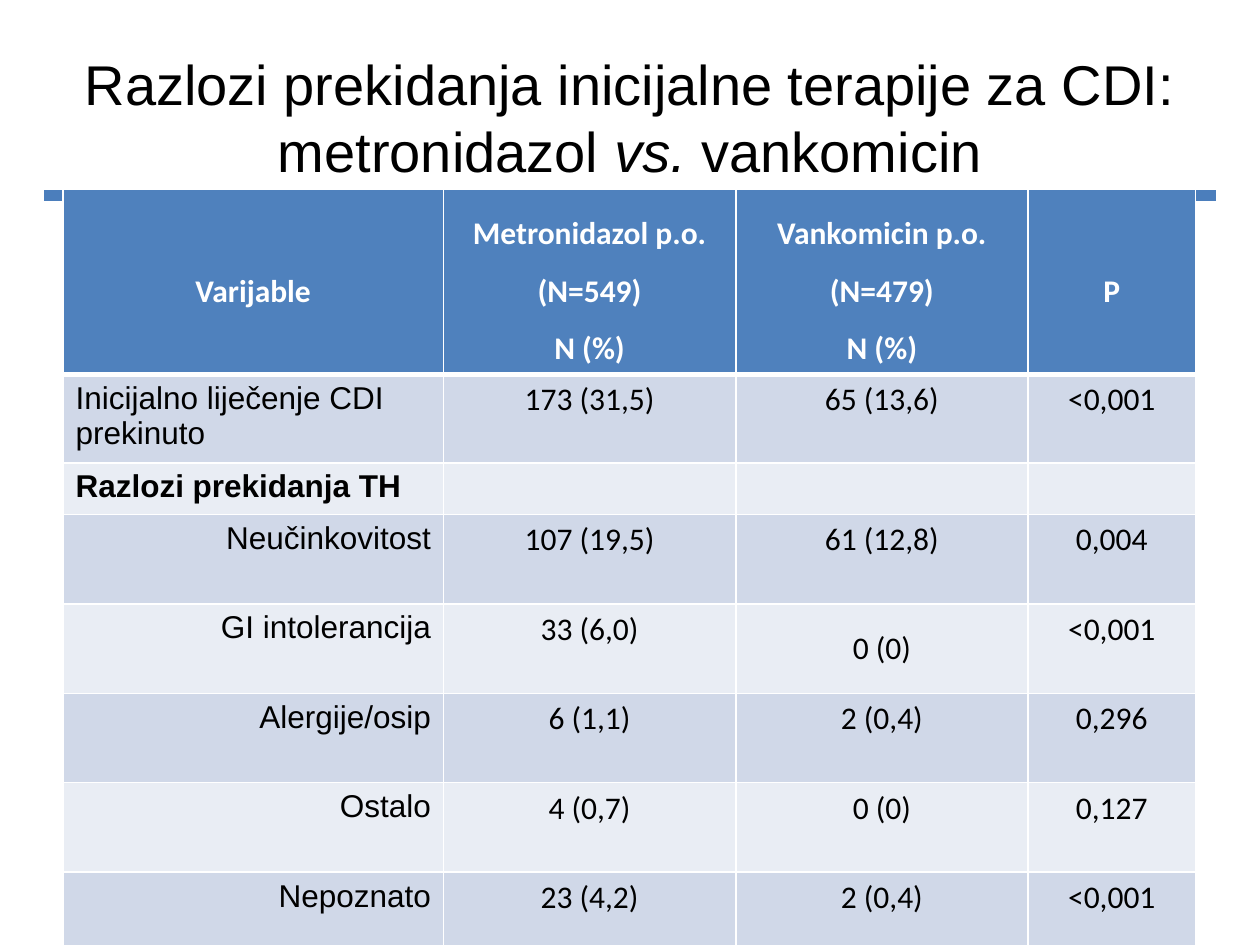
import pptx
import pptx.util
import pptx.dml.color
import pptx.enum.shapes
import pptx.enum.text
import pptx.oxml
import pptx.oxml.ns

PX = 9144
ALIGN = pptx.enum.text.PP_ALIGN
WHITE, BLACK = "FFFFFF", "000000"
BLUE, RULE = "4F81BD", "4B7EBC"
BANDS = ["D0D8E8", "E9EDF4"]
COLS = [302, 232, 232, 133]
ROWS = [146, 70, 41] + [71] * 5
HEAD = [
    ["Varijable"],
    ["Metronidazol p.o. (N=549)", "N (%)"],
    ["Vankomicin p.o. (N=479)", "N (%)"],
    ["P"],
]
DATA = [
    ["Inicijalno liječenje CDI prekinuto", "173 (31,5)", "65 (13,6)", "<0,001"],
    ["Razlozi prekidanja TH", "", "", ""],
    ["Neučinkovitost", "107 (19,5)", "61 (12,8)", "0,004"],
    ["GI intolerancija", "33 (6,0)", "0 (0)", "<0,001"],
    ["Alergije/osip", "6 (1,1)", "2 (0,4)", "0,296"],
    ["Ostalo", "4 (0,7)", "0 (0)", "0,127"],
    ["Nepoznato", "23 (4,2)", "2 (0,4)", "<0,001"],
]


def color(code):
    return pptx.dml.color.RGBColor.from_string(code)


def style(para, face, size, code, align, bold=False):
    para.alignment = align
    font = para.font
    font.name, font.size, font.bold = face, pptx.util.Pt(size), bold
    font.color.rgb = color(code)


def place(shape, box):
    shape.left, shape.top, shape.width, shape.height = [v * PX for v in box]


def add_title(slide, box):
    title = slide.shapes.title
    place(title, box)
    frame = title.text_frame
    frame.auto_size = pptx.enum.text.MSO_AUTO_SIZE.NONE
    frame.vertical_anchor = pptx.enum.text.MSO_ANCHOR.MIDDLE
    para = frame.paragraphs[0]
    style(para, "Arial", 32, BLACK, ALIGN.CENTER)
    parts = ["Razlozi prekidanja inicijalne terapije za CDI: metronidazol ",
             "vs.", " vankomicin"]
    for text in parts:
        run = para.add_run()
        run.text = text
        if text == "vs.":
            run.font.italic = True


def add_rule(slide, left, top, width):
    kind = pptx.enum.shapes.MSO_CONNECTOR.STRAIGHT
    line = slide.shapes.add_connector(
        kind, left * PX, top * PX, (left + width) * PX, top * PX)
    line.line.color.rgb = color(RULE)
    line.line.width = pptx.util.Pt(6)
    props = line._element.spPr
    props.append(pptx.oxml.parse_xml(
        f"<a:effectLst {pptx.oxml.ns.nsdecls('a')}/>"))


def paint(cell, code, top, base):
    props = cell._tc.get_or_add_tcPr()
    for side, size in zip("LRTB", (1, 1, top, base)):
        props.append(pptx.oxml.parse_xml(
            f"<a:ln{side} {pptx.oxml.ns.nsdecls('a')} w='{size * 12700}'>"
            f"<a:solidFill><a:srgbClr val='{WHITE}'/></a:solidFill>"
            f"</a:ln{side}>"))
    cell.fill.solid()
    cell.fill.fore_color.rgb = color(code)


def fill_head(cells):
    for cell, lines in zip(cells, HEAD):
        paint(cell, BLUE, 1, 3)
        cell.text = "\n".join(lines)
        for para in cell.text_frame.paragraphs:
            style(para, "Calibri", 18, WHITE, ALIGN.CENTER, True)
            if len(lines) > 1:
                para.line_spacing = 1.5
        if len(lines) == 1:
            cell.margin_top = 66 * PX


def fill_row(cells, index, texts):
    for col, (cell, text) in enumerate(zip(cells, texts)):
        paint(cell, BANDS[index % 2], 3 if index == 0 else 1, 1)
        cell.text = text
        para = cell.text_frame.paragraphs[0]
        if col:
            style(para, "Calibri", 18, BLACK, ALIGN.CENTER)
        else:
            align = ALIGN.LEFT if index < 2 else ALIGN.RIGHT
            style(para, "Arial", 18, BLACK, align, index == 1)
        if (index, col) == (3, 2):
            para.line_spacing = 1.5


def add_grid(slide, left, top):
    table = slide.shapes.add_table(
        len(ROWS), len(COLS), left * PX, top * PX,
        sum(COLS) * PX, sum(ROWS) * PX).table
    for col, width in zip(table.columns, COLS):
        col.width = width * PX
    for row, height in zip(table.rows, ROWS):
        row.height = height * PX
    rows = list(table.rows)
    fill_head(rows[0].cells)
    for index, texts in enumerate(DATA):
        fill_row(rows[index + 1].cells, index, texts)


def main():
    deck = pptx.Presentation()
    deck.slide_width, deck.slide_height = 1000 * PX, 750 * PX
    slide = deck.slides.add_slide(deck.slide_layouts[5])
    add_title(slide, (50, 30, 900, 125))
    add_rule(slide, 35, 155, 930)
    add_grid(slide, 50, 150)
    deck.save("out.pptx")


if __name__ == "__main__":
    main()
